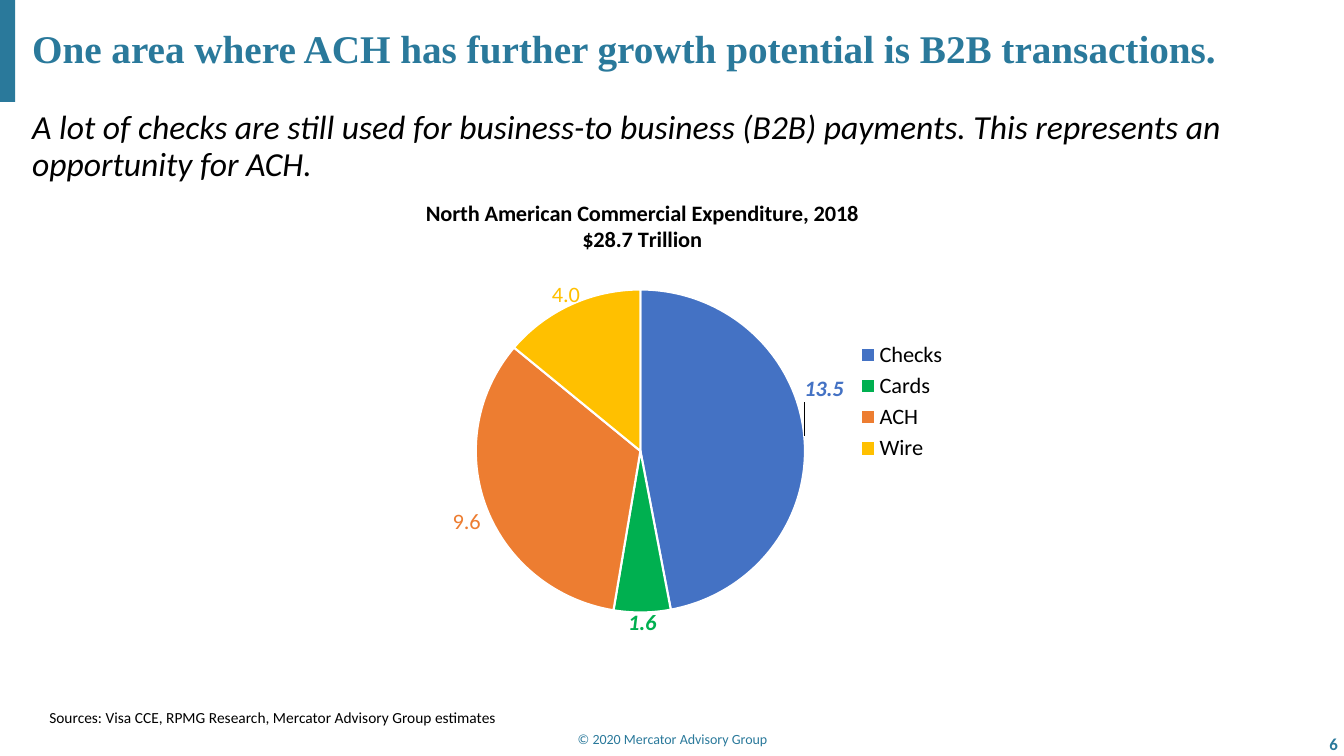
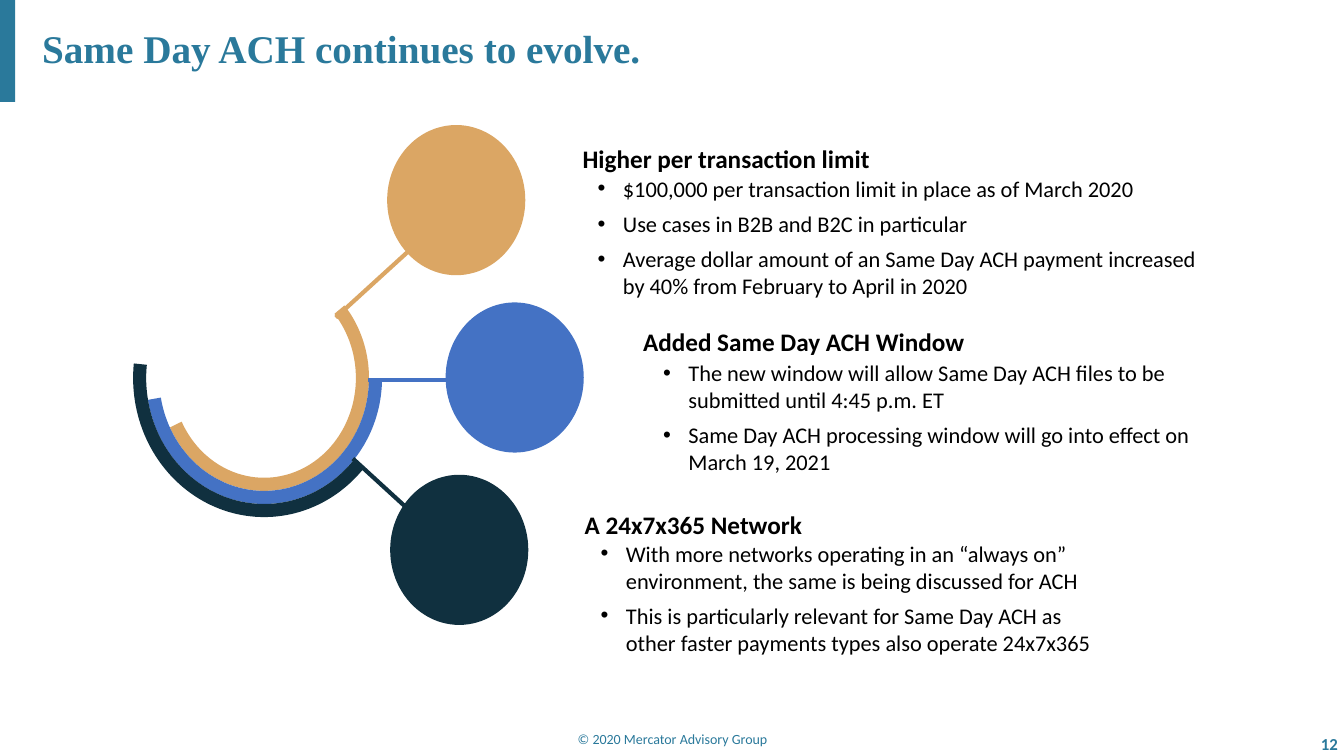
from math import cos, radians, sin

from pptx import Presentation
from pptx.chart.data import CategoryChartData
from pptx.dml.color import RGBColor
from pptx.enum.chart import XL_CHART_TYPE as CHART, XL_LABEL_POSITION as LABEL, XL_LEGEND_POSITION as LEGEND
from pptx.enum.shapes import MSO_CONNECTOR as LINE, MSO_SHAPE as SHAPE
from pptx.enum.text import MSO_ANCHOR as ANCHOR, PP_ALIGN as ALIGN
from pptx.oxml import parse_xml
from pptx.oxml.ns import nsdecls, qn
from pptx.util import Pt

PX = 9144  # 100 px to the inch
TEAL, BLACK, WHITE = "2A799B", "000000", "FFFFFF"
TAN, BLUE, NAVY = "DBA664", "4472C4", "10303F"
BODY_FONT, TITLE_FONT = "Calibri", "Times New Roman"


def rgb(code):
    return RGBColor.from_string(code)


def add_text(slide, box, lines, size, color=BLACK, bold=False, italic=False, font=BODY_FONT,
             align=ALIGN.LEFT, anchor=ANCHOR.MIDDLE, spacing=None, bullet_left=None):
    frame = slide.shapes.add_textbox(*(v * PX for v in box)).text_frame
    frame.word_wrap = True
    frame.vertical_anchor = anchor
    frame.text = "\n".join(lines)
    for paragraph in frame.paragraphs:
        paragraph.alignment = align
        paragraph.line_spacing = spacing
        if bullet_left:
            paragraph.space_after = Pt(6)
            props = paragraph._p.get_or_add_pPr()
            props.set("marL", str(bullet_left * PX))
            props.set("indent", str(-25 * PX))
            props.append(parse_xml(f'<a:buFont {nsdecls("a")} typeface="Arial"/>'))
            props.append(parse_xml(f'<a:buChar {nsdecls("a")} char="•"/>'))
        for run in paragraph.runs:
            run.font.name, run.font.size = font, Pt(size)
            run.font.bold, run.font.italic = bold, italic
            run.font.color.rgb = rgb(color)
    return frame


prs = Presentation()
prs.slide_width, prs.slide_height = 1333 * PX, 750 * PX

# Band, title, footer and number of every slide
slides = []
for title, title_left, number in [
    ("One area where ACH has further growth potential is B2B transactions.", 22, "6"),
    ("Same Day ACH continues to evolve.", 32, "12"),
]:
    slide = prs.slides.add_slide(prs.slide_layouts[6])
    band = slide.shapes.add_shape(SHAPE.RECTANGLE, 0, 0, 15 * PX, 101 * PX)
    band.shadow.inherit = False
    band.fill.solid()
    band.fill.fore_color.rgb = rgb(TEAL)
    band.line.fill.background()
    add_text(slide, (title_left, 0, 1206, 101), [title], 28, TEAL, bold=True,
             font=TITLE_FONT, spacing=0.9)
    add_text(slide, (442, 721, 450, 25), ["© 2020 Mercator Advisory Group"], 10, TEAL,
             align=ALIGN.CENTER)
    number_frame = add_text(slide, (1280, 725, 47, 25), [number], 12, TEAL, bold=True,
                            align=ALIGN.RIGHT)
    number_frame.margin_right = 0
    slides.append(slide)
growth, same_day = slides

# Slide 1: message and sources
add_text(growth, (22, 105, 1272, 90),
         ["A lot of checks are still used for business-to business (B2B) payments. "
          "This represents an opportunity for ACH."],
         24, italic=True, anchor=ANCHOR.TOP, spacing=0.9)
add_text(growth, (39, 698, 468, 29),
         ["Sources: Visa CCE, RPMG Research, Mercator Advisory Group estimates"],
         11, anchor=ANCHOR.TOP)

# Slide 1: expenditure pie; payment type, value, colour, emphasis
payments = [("Checks", 13.5, BLUE, True), ("Cards", 1.6, "00B050", True),
            ("ACH", 9.6, "ED7D31", False), ("Wire", 4.0, "FFC000", False)]
data = CategoryChartData(number_format="0.0")
data.categories = [payment[0] for payment in payments]
data.add_series("Series 1", [payment[1] for payment in payments])
chart = growth.shapes.add_chart(CHART.PIE, 367 * PX, 166 * PX, 583 * PX, 474 * PX, data).chart
chart.font.name, chart.font.size = BODY_FONT, Pt(16)
chart.font.color.rgb = rgb(BLACK)
chart.has_legend = True
chart.legend.position = LEGEND.RIGHT
chart.legend.include_in_layout = False
chart.legend.font.size = Pt(16)

chart.has_title = True
heading = chart.chart_title.text_frame
heading.text = "North American Commercial Expenditure, 2018\n$28.7 Trillion"
for paragraph in heading.paragraphs:
    font = paragraph.runs[0].font
    font.name, font.size, font.bold = BODY_FONT, Pt(16), True
    font.color.rgb = rgb(BLACK)

pie = chart.plots[0]
pie.vary_by_categories = True
for index, (_, _, color, strong) in enumerate(payments):
    point = pie.series[0].points[index]
    point.format.fill.solid()
    point.format.fill.fore_color.rgb = rgb(color)
    point.format.line.color.rgb = rgb(WHITE)
    point.format.line.width = Pt(1.5)
    font = point.data_label.font
    font.name, font.size, font.bold, font.italic = BODY_FONT, Pt(16), strong, strong
    font.color.rgb = rgb(color)
    point.data_label.position = LABEL.OUTSIDE_END

# Places of the title, the plot and the two shifted labels, as shares of the chart
root = chart._chartSpace
labels = list(root.iter(qn("c:dLbl")))
edges = '<c:xMode val="edge"/><c:yMode val="edge"/>'
for part, index, modes, shares in [
    (next(root.iter(qn("c:title"))), 1, edges, {"x": 0.09, "y": 0.06}),
    (next(root.iter(qn("c:plotArea"))), 0, '<c:layoutTarget val="inner"/>' + edges,
     {"x": 0.18, "y": 0.22, "w": 0.56, "h": 0.79}),
    (labels[0], 1, "", {"x": -0.01, "y": -0.07}),
    (labels[3], 1, "", {"x": 0.02, "y": 0.02}),
]:
    for old in part.findall(qn("c:layout")):
        part.remove(old)
    values = "".join(f'<c:{key} val="{share}"/>' for key, share in shares.items())
    part.insert(index, parse_xml(
        f'<c:layout {nsdecls("c")}><c:manualLayout>{modes}{values}</c:manualLayout></c:layout>'))

# Slide 2: concentric arcs, each linked to a circle
CENTER_X, CENTER_Y, RING = 262, 375, 13
branches = [  # colour, arc start and end in degrees, link ends, circle corner
    (TAN, -40, 154, (333, 315, 412, 243), (384, 124)),
    (BLUE, 0, 170, (365, 377, 453, 377), (442, 300)),
    (NAVY, 40, 186, (350, 455, 409, 509), (387, 471)),
]
for ring, (color, start, end, link_ends, corner) in enumerate(branches):
    link = same_day.shapes.add_connector(LINE.STRAIGHT, *(v * PX for v in link_ends))
    link.line.color.rgb = rgb(color)
    link.line.width = Pt(3)
    link._element.spPr.append(parse_xml(f'<a:effectLst {nsdecls("a")}/>'))

    outline = []
    for inset, angles in [(0, range(start, end + 1, 2)), (RING, range(end, start - 1, -2))]:
        radius_x = 104 + RING * ring - inset
        radius_y = 112 + RING * ring - inset
        outline += [(round((CENTER_X + radius_x * cos(radians(a))) * PX),
                     round((CENTER_Y + radius_y * sin(radians(a))) * PX)) for a in angles]
    builder = same_day.shapes.build_freeform(*outline[0])
    builder.add_line_segments(outline[1:], close=True)
    arc = builder.convert_to_shape()
    circle = same_day.shapes.add_shape(SHAPE.OVAL, *(v * PX for v in (*corner, 137, 149)))
    for solid in (arc, circle):
        solid.shadow.inherit = False
        solid.fill.solid()
        solid.fill.fore_color.rgb = rgb(color)
        solid.line.fill.background()

# Slide 2: heading and bullets beside each circle
for topic, topic_box, details, details_box, bullet_left in [
    ("Higher per transaction limit", (568, 137, 635, 40),
     ["$100,000 per transaction limit in place as of March 2020",
      "Use cases in B2B and B2C in particular",
      "Average dollar amount of an Same Day ACH payment increased by 40% from February to April in 2020"],
     (578, 168, 638, 134), 30),
    ("Added Same Day ACH Window", (628, 319, 635, 40),
     ["The new window will allow Same Day ACH files to be submitted until 4:45 p.m. ET",
      "Same Day ACH processing window will go into effect on March 19, 2021"],
     (638, 351, 613, 126), 35),
    ("A 24x7x365 Network", (570, 500, 434, 40),
     ["With more networks operating in an “always on” environment, the same is being discussed for ACH",
      "This is particularly relevant for Same Day ACH as other faster payments types also operate 24x7x365"],
     (581, 530, 534, 126), 30),
]:
    add_text(same_day, details_box, details, 16, bullet_left=bullet_left)
    add_text(same_day, topic_box, [topic], 18, bold=True)

prs.save("out.pptx")
